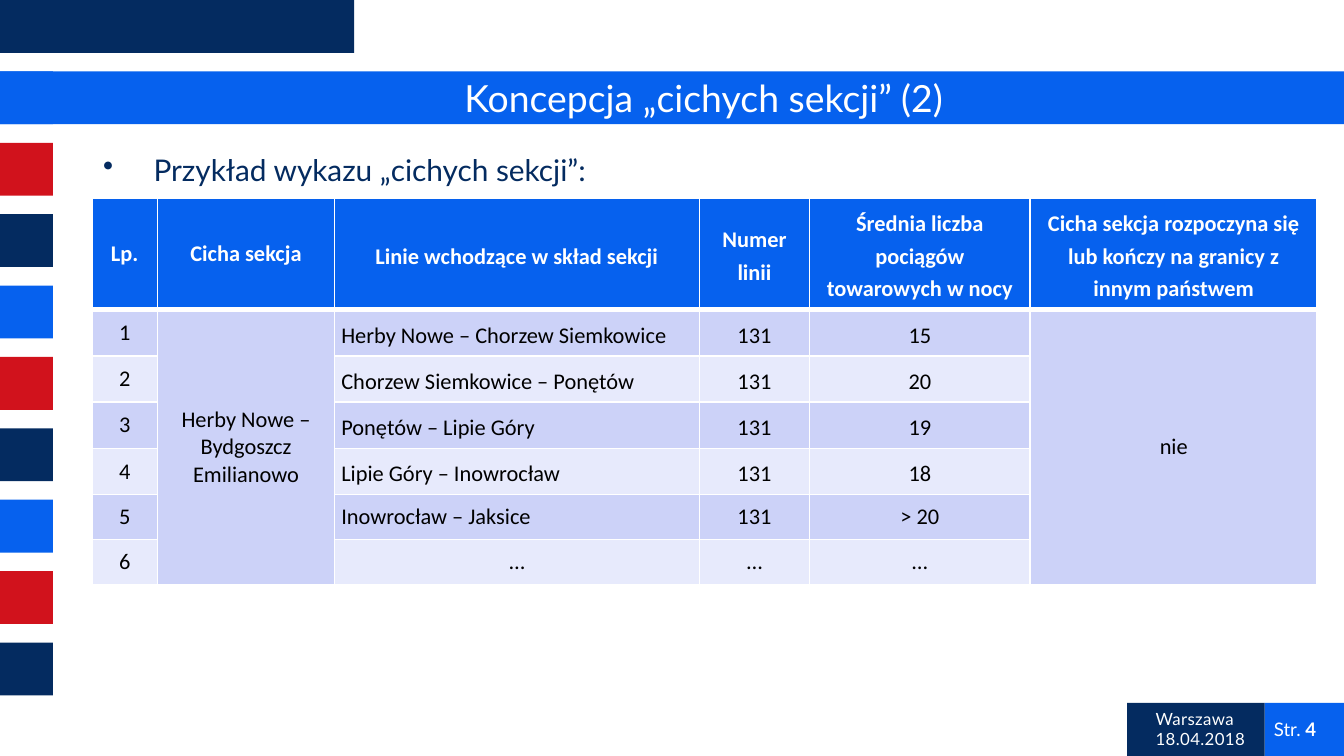
"""Build the slide listing an example of quiet railway sections."""
from dataclasses import dataclass

import lxml.etree
import pptx
import pptx.dml.color
import pptx.enum.shapes
import pptx.enum.text
import pptx.oxml.ns
import pptx.util

Pt = pptx.util.Pt
RGBColor = pptx.dml.color.RGBColor
Align = pptx.enum.text.PP_ALIGN
Anchor = pptx.enum.text.MSO_ANCHOR
qn = pptx.oxml.ns.qn

NAVY = RGBColor(0x04, 0x2B, 0x60)
BLUE = RGBColor(0x06, 0x61, 0xEE)
RED = RGBColor(0xD1, 0x12, 0x1C)
WHITE = RGBColor(0xFF, 0xFF, 0xFF)
BLACK = RGBColor(0, 0, 0)
DARK = RGBColor(0xCC, 0xD2, 0xF8)
LIGHT = RGBColor(0xE7, 0xEA, 0xFC)

SIDE = 28.35
STEP = 38.25
FOOT = 376.65
INSET = 3.6
WIDTHS = (35.2, 94.9, 195.4, 59.1, 118.2, 153.8)
HEIGHTS = (59.9, 24.8, 24.8, 24.8, 24.8, 24.1, 24.1)
HEADS = (
    "Lp.",
    "Cicha sekcja",
    "Linie wchodzące w skład sekcji",
    "Numer linii",
    "Średnia liczba pociągów towarowych w nocy",
    "Cicha sekcja rozpoczyna się lub kończy na granicy z innym państwem",
)
LINES = (
    ("Herby Nowe – Chorzew Siemkowice", "131", "15"),
    ("Chorzew Siemkowice – Ponętów", "131", "20"),
    ("Ponętów – Lipie Góry", "131", "19"),
    ("Lipie Góry – Inowrocław", "131", "18"),
    ("Inowrocław – Jaksice", "131", "> 20"),
    ("…", "…", "…"),
)
MERGED = {1: "Herby Nowe – Bydgoszcz Emilianowo", 5: "nie"}


@dataclass
class Bar:
    left: float
    top: float
    width: float
    color: RGBColor


@dataclass
class Label:
    text: str
    left: float
    top: float
    width: float
    height: float
    size: float
    color: RGBColor = WHITE
    anchor: Anchor = Anchor.MIDDLE
    align: Align = Align.LEFT


BARS = [Bar(0, i * STEP, SIDE, (NAVY, BLUE, RED)[i % 3]) for i in range(10)] + [
    Bar(677.5, FOOT, 42.5, BLUE),
    Bar(603.9, FOOT, 73.6, NAVY),
    Bar(0, 0, 189.8, NAVY),
    Bar(0, STEP, 720, BLUE),
]
TITLE = Label("Koncepcja „cichych sekcji” (2)", 48.2, STEP, 657.6, SIDE, 20,
              align=Align.CENTER)
POINT = Label("Przykład wykazu „cichych sekcji”:", 48.2, 77.8, 658, 28, 16,
              NAVY, Anchor.TOP)
PAGE = Label("Str. ", 675.4, 382.5, 50.4, 15.8, 10)
PLACE = Label("Warszawa\n18.04.2018", 612, 382.5, 65.5, 15.8, 9)


def draw_bar(slide: pptx.slide.Slide, bar: Bar) -> None:
    shape = slide.shapes.add_shape(
        pptx.enum.shapes.MSO_SHAPE.RECTANGLE,
        Pt(bar.left), Pt(bar.top), Pt(bar.width), Pt(SIDE))
    shape.shadow.inherit = False
    shape.fill.solid()
    shape.fill.fore_color.rgb = bar.color
    shape.line.fill.background()


def draw_label(slide: pptx.slide.Slide, label: Label) -> pptx.text.text.TextFrame:
    box = slide.shapes.add_textbox(
        Pt(label.left), Pt(label.top), Pt(label.width), Pt(label.height))
    frame = box.text_frame
    frame.word_wrap = True
    frame.vertical_anchor = label.anchor
    frame.text = label.text
    for para in frame.paragraphs:
        para.alignment = label.align
        para.font.name = "Lato"
        para.font.size = Pt(label.size)
        para.font.color.rgb = label.color
    return frame


def add_bullet(para: pptx.text.text._Paragraph) -> None:
    props = para._p.get_or_add_pPr()
    props.set("marL", str(Pt(27)))
    props.set("indent", str(Pt(-27)))
    mark = lxml.etree.Element(qn("a:buChar"), char="•")
    props.insert(0, mark)


def add_edges(cell: pptx.table._Cell, row: int) -> None:
    props = cell._tc.get_or_add_tcPr()
    thick = {"T": row == 1, "B": row == 0}
    for index, side in enumerate("LRTB"):
        width = Pt(3 if thick.get(side) else 1)
        edge = lxml.etree.Element(qn(f"a:ln{side}"), w=str(width))
        fill = lxml.etree.SubElement(edge, qn("a:solidFill"))
        lxml.etree.SubElement(fill, qn("a:srgbClr"), val=str(WHITE))
        props.insert(index, edge)


def fill_cell(cell: pptx.table._Cell, text: str, row: int, col: int) -> None:
    cell.margin_left = cell.margin_right = Pt(INSET)
    cell.margin_top = cell.margin_bottom = Pt(INSET)
    cell.vertical_anchor = Anchor.MIDDLE
    cell.fill.solid()
    tint = DARK if row % 2 or col in MERGED else LIGHT
    cell.fill.fore_color.rgb = tint if row else BLUE
    add_edges(cell, row)
    if not text:
        return
    cell.text = text
    para = cell.text_frame.paragraphs[0]
    named = col == 2 and 1 <= row <= 5
    para.alignment = Align.LEFT if named else Align.CENTER
    if (row == 0 and col >= 2) or (1 <= row <= 4 and 2 <= col <= 4):
        para.line_spacing = 1.2
    para.font.name = "Calibri"
    para.font.size = Pt(12)
    para.font.bold = row == 0
    para.font.color.rgb = BLACK if row else WHITE


def draw_table(slide: pptx.slide.Slide) -> None:
    table = slide.shapes.add_table(
        len(HEIGHTS), len(WIDTHS), Pt(49.2), Pt(106),
        Pt(sum(WIDTHS)), Pt(sum(HEIGHTS))).table
    for column, width in zip(table.columns, WIDTHS):
        column.width = Pt(width)
    for line, height in zip(table.rows, HEIGHTS):
        line.height = Pt(height)
    rows = [HEADS]
    for index, line in enumerate(LINES, 1):
        first, last = MERGED.values() if index == 1 else ("", "")
        rows.append((str(index), first, *line, last))
    for row, texts in enumerate(rows):
        for col, text in enumerate(texts):
            fill_cell(table.cell(row, col), text, row, col)
    for col in MERGED:
        table.cell(1, col).merge(table.cell(len(LINES), col))


def main() -> None:
    deck = pptx.Presentation()
    deck.slide_width, deck.slide_height = Pt(720), Pt(405)
    slide = deck.slides.add_slide(deck.slide_layouts[6])
    for bar in BARS:
        draw_bar(slide, bar)
    page = draw_label(slide, PAGE).paragraphs[0].add_run()
    page.text = "4"
    page.font.bold = True
    for para in draw_label(slide, PLACE).paragraphs:
        para.runs[0]._r.get_or_add_rPr().set("spc", "20")
    point = draw_label(slide, POINT)
    add_bullet(point.paragraphs[0])
    draw_label(slide, TITLE)
    draw_table(slide)
    deck.save("out.pptx")


if __name__ == "__main__":
    main()
